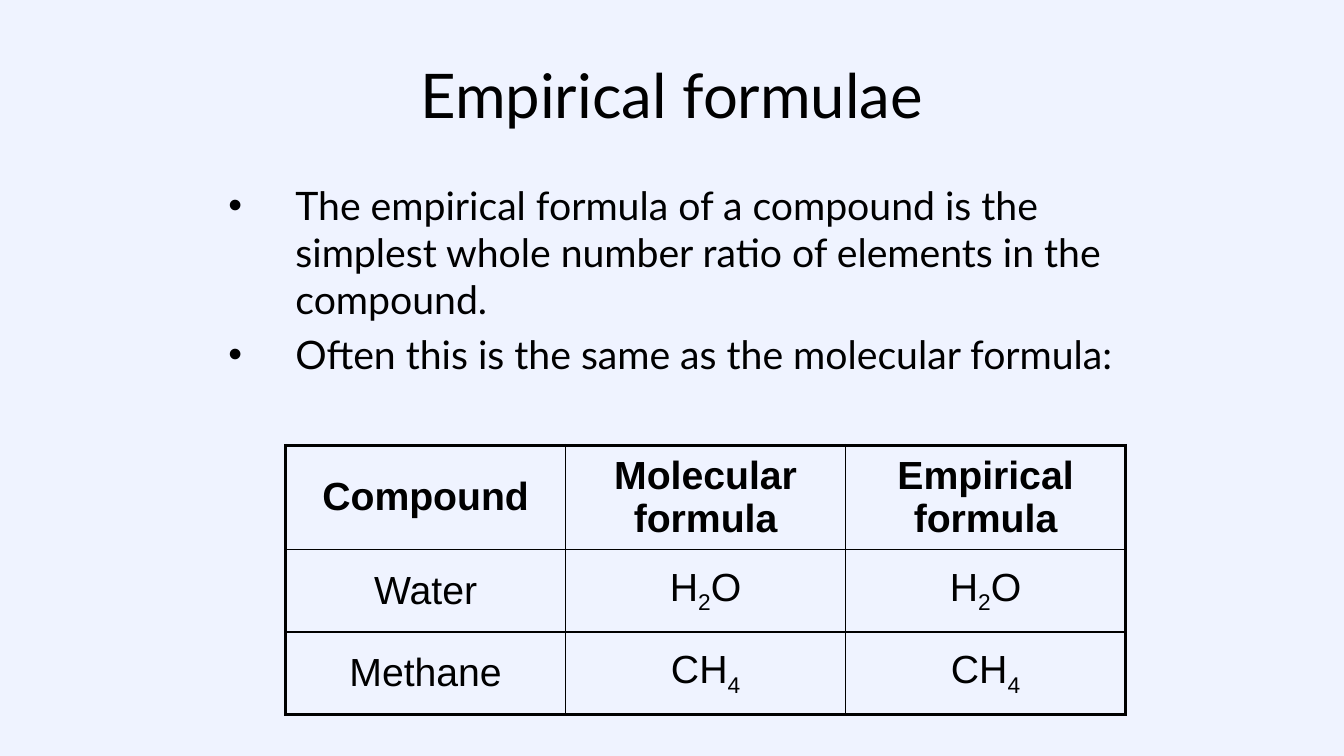
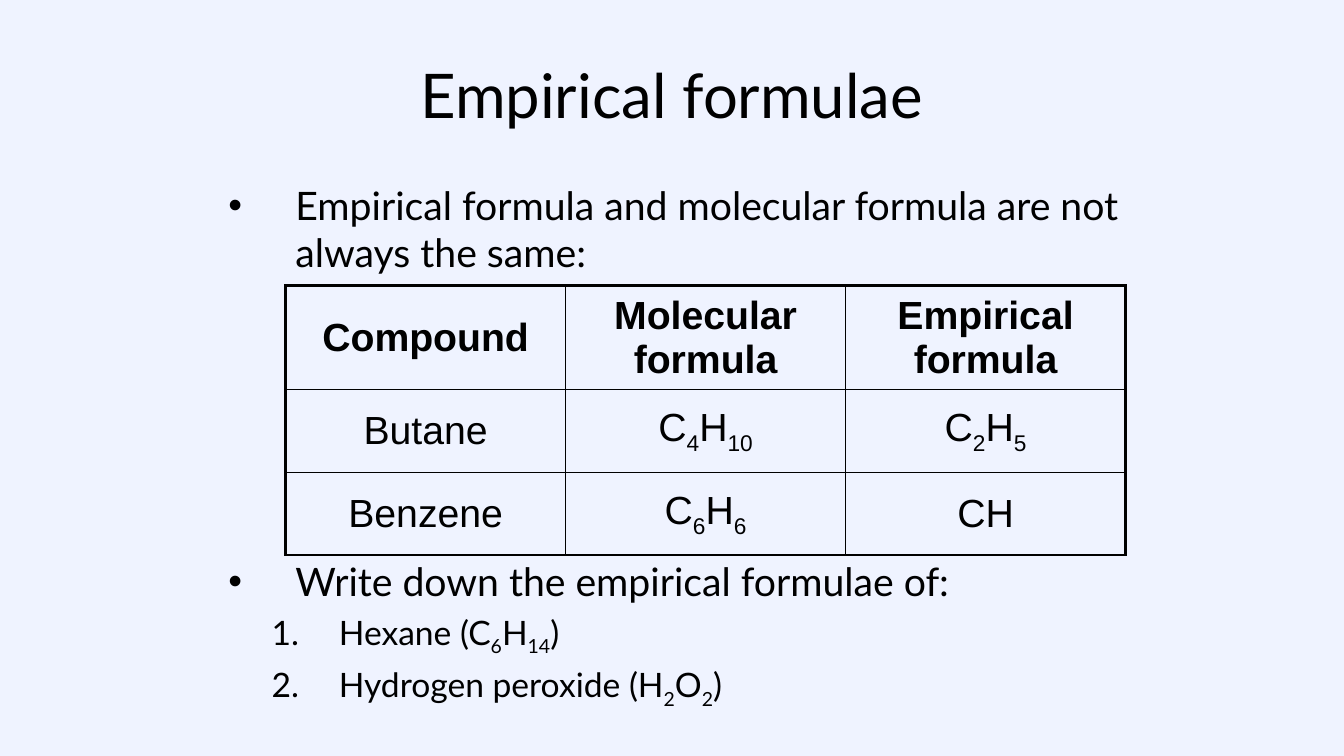
from lxml import etree
from pptx import Presentation
from pptx.dml.color import RGBColor
from pptx.enum import text
from pptx.oxml import ns
from pptx.util import Pt

BACKGROUND, INK = "EFF3FF", "000000"
HEADING_FONT, TABLE_FONT = "Lato", "Arial"
TITLE_BOX = (48, 22, 864, 90)
BODY_BOX = (156, 126, 654, 356)
TABLE_LEFT, COLUMN_WIDTH, ROW_HEIGHT = 204, 200, 59
OUTER_LINE, INNER_LINE = 2.25, 1
HANGING = 48
LEVELS = {
    "bullet": {"size": 28, "margin": 48, "tag": "a:buChar", "mark": {"char": "•"}},
    "number": {"size": 24, "margin": 79, "tag": "a:buAutoNum", "mark": {"type": "arabicPeriod"}},
}
TITLE = "Empirical formulae"
HEADER = ("Compound", "Molecular formula", "Empirical formula")

# _ marks the start and end of a subscript
SLIDES = [
    {
        "body": [
            ("bullet", "The empirical formula of a compound is the simplest whole number "
                       "ratio of elements in the compound.", 0),
            ("bullet", "Often this is the same as the molecular formula:", 0),
        ],
        "table_top": 318,
        "header_height": 74,
        "rows": [("Water", "H_2_O", "H_2_O"), ("Methane", "CH_4_", "CH_4_")],
    },
    {
        "body": [
            ("bullet", "Empirical formula and molecular formula are not always the same:", 0),
            ("bullet", "Write down the empirical formulae of:", 196),
            ("number", "Hexane (C_6_H_14_)", 0),
            ("number", "Hydrogen peroxide (H_2_O_2_)", 0),
        ],
        "table_top": 204,
        "header_height": 70,
        "rows": [("Butane", "C_4_H_10_", "C_2_H_5_"), ("Benzene", "C_6_H_6_", "CH")],
    },
]


def color(value):
    return RGBColor.from_string(value)


def add_element(parent, tag, **attributes):
    element = etree.SubElement(parent, ns.qn(tag))
    for name, value in attributes.items():
        element.set(name, str(value))
    return element


def write(paragraph, marked_text, font, size, bold=False):
    for index, part in enumerate(marked_text.split("_")):
        if not part:
            continue
        run = paragraph.add_run()
        run.text = part
        run.font.name, run.font.size, run.font.bold = font, Pt(size), bold
        run.font.color.rgb = color(INK)
        if index % 2:
            run.font._element.set("baseline", "-25000")


def add_text_box(slide, box):
    text_frame = slide.shapes.add_textbox(*map(Pt, box)).text_frame
    text_frame.word_wrap = True
    return text_frame


def add_title(slide):
    text_frame = add_text_box(slide, TITLE_BOX)
    text_frame.vertical_anchor = text.MSO_ANCHOR.MIDDLE
    paragraph = text_frame.paragraphs[0]
    paragraph.alignment = text.PP_ALIGN.CENTER
    write(paragraph, TITLE, HEADING_FONT, 44)


def add_body(slide, items):
    text_frame = add_text_box(slide, BODY_BOX)
    for index, (kind, content, gap) in enumerate(items):
        level = LEVELS[kind]
        paragraph = text_frame.add_paragraph() if index else text_frame.paragraphs[0]
        paragraph.space_before = Pt(0.2 * level["size"] + gap if index else 0)
        properties = paragraph._p.get_or_add_pPr()
        properties.set("marL", str(Pt(level["margin"])))
        properties.set("indent", str(Pt(-HANGING)))
        add_element(properties, "a:buFont", typeface=TABLE_FONT if kind == "bullet" else HEADING_FONT)
        add_element(properties, level["tag"], **level["mark"])
        write(paragraph, content, HEADING_FONT, level["size"])


def add_borders(cell, outer_sides):
    properties = cell._tc.get_or_add_tcPr()
    for side, is_outer in outer_sides.items():
        width = OUTER_LINE if is_outer else INNER_LINE
        line = add_element(properties, "a:ln" + side, w=Pt(width))
        add_element(add_element(line, "a:solidFill"), "a:srgbClr", val=INK)


def add_formula_table(slide, top, header_height, body_rows):
    rows = [HEADER, *body_rows]
    heights = [header_height] + [ROW_HEIGHT] * len(body_rows)
    last_row, last_column = len(rows) - 1, len(HEADER) - 1
    box = (TABLE_LEFT, top, COLUMN_WIDTH * len(HEADER), sum(heights))
    table = slide.shapes.add_table(len(rows), len(HEADER), *map(Pt, box)).table
    table.first_row = table.horz_banding = False
    for column in table.columns:
        column.width = Pt(COLUMN_WIDTH)
    for row_index, (row, height) in enumerate(zip(rows, heights)):
        table.rows[row_index].height = Pt(height)
        for column_index, content in enumerate(row):
            cell = table.cell(row_index, column_index)
            cell.vertical_anchor = text.MSO_ANCHOR.MIDDLE
            add_borders(cell, {
                "L": column_index == 0,
                "R": column_index == last_column,
                "T": row_index == 0,
                "B": row_index == last_row,
            })
            cell.fill.background()
            paragraph = cell.text_frame.paragraphs[0]
            paragraph.alignment = text.PP_ALIGN.CENTER
            write(paragraph, content, TABLE_FONT, 28, bold=row_index == 0)


def main():
    presentation = Presentation()
    presentation.slide_width, presentation.slide_height = Pt(960), Pt(540)
    fill = presentation.slide_master.background.fill
    fill.solid()
    fill.fore_color.rgb = color(BACKGROUND)
    for content in SLIDES:
        slide = presentation.slides.add_slide(presentation.slide_layouts[6])
        add_title(slide)
        add_body(slide, content["body"])
        add_formula_table(slide, content["table_top"], content["header_height"], content["rows"])
    presentation.save("out.pptx")


if __name__ == "__main__":
    main()
